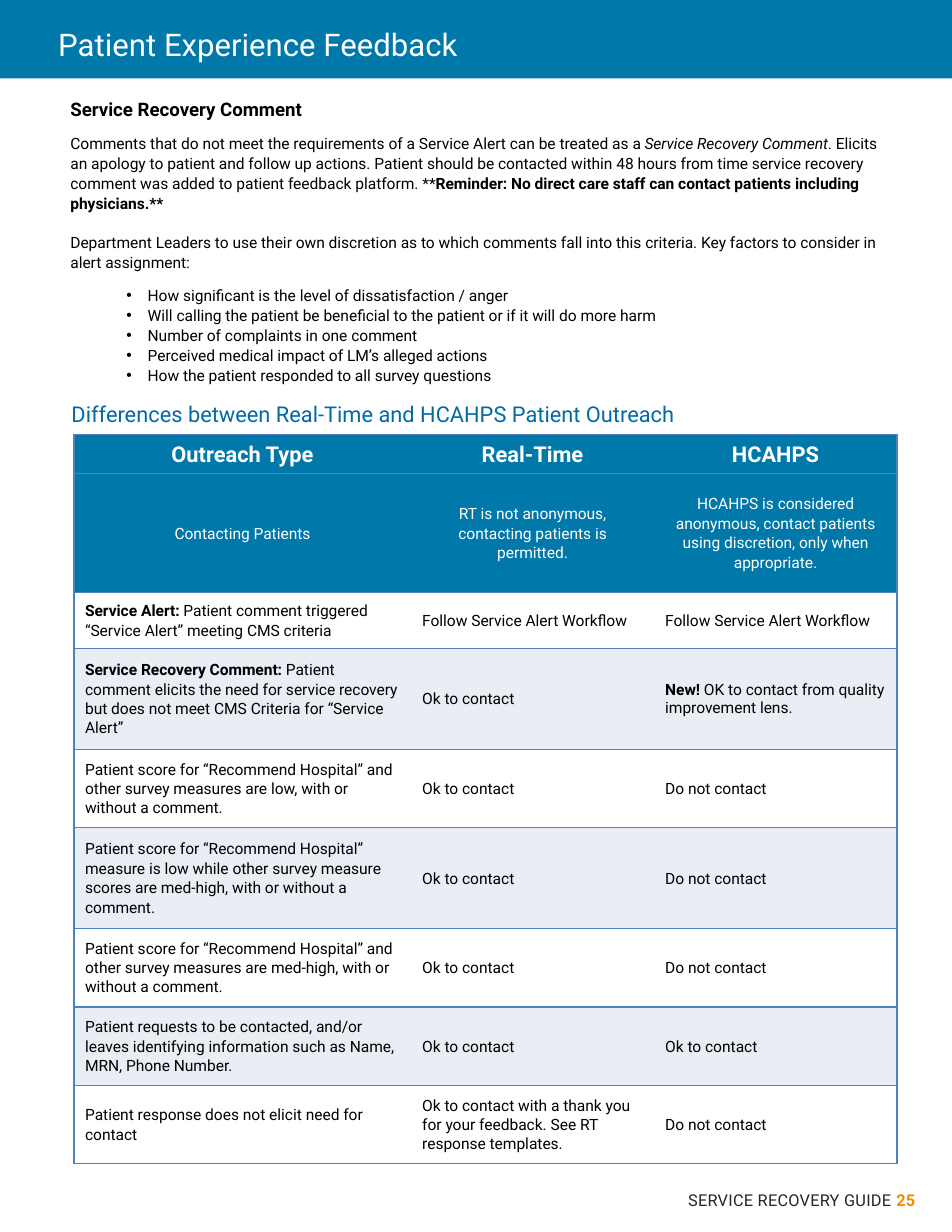
import dataclasses
import typing

import pptx
import pptx.dml.color
import pptx.enum.shapes
import pptx.enum.text
import pptx.oxml.ns
import pptx.oxml.xmlchemy
import pptx.util
from lxml import etree

RGBColor = pptx.dml.color.RGBColor
BLUE = RGBColor(0x00, 0x78, 0xA9)
HEADING_BLUE = RGBColor(0x00, 0x69, 0xA6)
BORDER_BLUE = RGBColor(0x4F, 0x81, 0xBD)
BAND = RGBColor(0xE9, 0xED, 0xF4)
ORANGE = RGBColor(0xF3, 0x8B, 0x00)
CHARCOAL = RGBColor(0x26, 0x26, 0x26)
BLACK = RGBColor(0, 0, 0)
WHITE = RGBColor(0xFF, 0xFF, 0xFF)

FONT = "Roboto"
LOOSE = 1.07
LEFT = pptx.enum.text.PP_ALIGN.LEFT
CENTER = pptx.enum.text.PP_ALIGN.CENTER
RIGHT = pptx.enum.text.PP_ALIGN.RIGHT
TOP = pptx.enum.text.MSO_ANCHOR.TOP
MIDDLE = pptx.enum.text.MSO_ANCHOR.MIDDLE
SLIDE_WIDTH = pptx.util.Inches(8.5)
SLIDE_HEIGHT = pptx.util.Inches(11)
COLUMN = SLIDE_WIDTH // 850
ROW = SLIDE_HEIGHT // 1100
PLAIN_TABLE_STYLE = "{2D5ABB26-0587-4C30-8999-92F81FD0307C}"


class Box(typing.NamedTuple):
    left: int
    top: int
    width: int
    height: int

    def lengths(self) -> tuple[int, int, int, int]:
        return self.left * COLUMN, self.top * ROW, self.width * COLUMN, self.height * ROW


class Run(typing.NamedTuple):
    text: str
    bold: bool = False
    italic: bool = False
    color: RGBColor = BLACK


@dataclasses.dataclass(frozen=True)
class Paragraph:
    runs: tuple[Run, ...]
    size: float = 10
    alignment: typing.Any = LEFT
    line_spacing: float = LOOSE
    space_after: float = 8
    bullet: bool = False
    tracking: int = 0


@dataclasses.dataclass(frozen=True)
class TableRow:
    height: int
    cells: tuple[Paragraph, ...]
    fill: RGBColor
    anchor: typing.Any = MIDDLE


def header(size: float, bold: bool, *texts: str) -> tuple[Paragraph, ...]:
    return tuple(Paragraph((Run(text, bold, color=WHITE),), size, CENTER) for text in texts)


def body(*texts: str) -> tuple[Paragraph, ...]:
    return tuple(Paragraph((Run(text),)) for text in texts)


def labelled(label: str, text: str, line_spacing: float = LOOSE) -> Paragraph:
    return Paragraph((Run(label, bold=True), Run(text)), line_spacing=line_spacing)


FOLLOW = "Follow Service Alert Workflow"
CONTACT = "Ok to contact"
NO_CONTACT = "Do not contact"
SCORE = "Patient score for “Recommend Hospital” "

GUIDANCE = (
    Paragraph((Run("Service Recovery Comment", bold=True),), 12),
    Paragraph((
        Run("Comments that do not meet the requirements of a Service Alert can be treated as a "),
        Run("Service Recovery Comment", italic=True),
        Run(". Elicits an apology to patient and follow up actions. Patient should be contacted within "
            "48 hours from time service recovery comment was added to patient feedback platform. **"),
        Run("Reminder: No direct care staff can contact patients including physicians.**", bold=True),
    ), space_after=12.5),
    Paragraph((Run("Department Leaders to use their own discretion as to which comments fall into this "
                   "criteria. Key factors to consider in alert assignment:"),)),
    *(Paragraph((Run(text),), space_after=0, bullet=True) for text in (
        "How significant is the level of dissatisfaction / anger",
        "Will calling the patient be beneficial to the patient or if it will do more harm",
        "Number of complaints in one comment",
        "Perceived medical impact of LM’s alleged actions",
        "How the patient responded to all survey questions",
    )),
)

TABLE_COLUMNS = (301, 217, 217)
TABLE_ROWS = (
    TableRow(35, header(14, True, "Outreach Type", "Real-Time", "HCAHPS"), BLUE, TOP),
    TableRow(106, header(
        10, False, "Contacting Patients",
        "RT is not anonymous, contacting patients is permitted.",
        "HCAHPS is considered anonymous, contact patients using discretion, only when appropriate."), BLUE),
    TableRow(50, (labelled("Service Alert: ", "Patient comment triggered “Service Alert” meeting CMS criteria"),
                  *body(FOLLOW, FOLLOW)), WHITE),
    TableRow(90, (labelled("Service Recovery Comment: ", "Patient comment elicits the need for service recovery "
                           "but does not meet CMS Criteria for “Service Alert”"),
                  *body(CONTACT),
                  labelled("New! ", "OK to contact from quality improvement lens.", 1)), BAND),
    TableRow(70, body(SCORE + "and other survey measures are low, with or without a comment.",
                      CONTACT, NO_CONTACT), WHITE),
    TableRow(90, body(SCORE + "measure is low while other survey measure scores are med-high, "
                      "with or without a comment.", CONTACT, NO_CONTACT), BAND),
    TableRow(70, body(SCORE + "and other survey measures are med-high, with or without a comment.",
                      CONTACT, NO_CONTACT), WHITE),
    TableRow(70, body("Patient requests to be contacted, and/or leaves identifying information such as "
                      "Name, MRN, Phone Number.", CONTACT, CONTACT), BAND),
    TableRow(70, body("Patient response does not elicit need for contact",
                      "Ok to contact with a thank you for your feedback. See RT response templates.",
                      NO_CONTACT), WHITE),
)


def add_element(parent: typing.Any, tag: str, **attributes: str) -> typing.Any:
    element = etree.SubElement(parent, pptx.oxml.ns.qn(tag))
    for name, value in attributes.items():
        element.set(name, value)
    return element


def write_paragraphs(text_frame: typing.Any, contents: typing.Sequence[Paragraph]) -> None:
    for index, content in enumerate(contents):
        paragraph = text_frame.add_paragraph() if index else text_frame.paragraphs[0]
        paragraph.alignment = content.alignment
        paragraph.line_spacing = content.line_spacing
        paragraph.space_after = pptx.util.Pt(content.space_after)
        if content.bullet:
            paragraph.level = 1
            properties = paragraph._p.get_or_add_pPr()
            properties.set("marL", str(69 * COLUMN))
            properties.set("indent", str(-19 * COLUMN))
            add_element(properties, "a:buFont", typeface="Arial")
            add_element(properties, "a:buChar", char="•")
        paragraph.font.name = FONT
        paragraph.font.size = pptx.util.Pt(content.size)
        for part in content.runs:
            run = paragraph.add_run()
            run.text = part.text
            run.font.bold = part.bold
            run.font.italic = part.italic
            run.font.color.rgb = part.color
            if content.tracking:
                run._r.get_or_add_rPr().set("spc", str(content.tracking))


def add_text(slide: typing.Any, box: Box, *contents: Paragraph) -> typing.Any:
    text_frame = slide.shapes.add_textbox(*box.lengths()).text_frame
    text_frame.word_wrap = True
    write_paragraphs(text_frame, contents)
    return text_frame


def add_banner(slide: typing.Any, box: Box) -> None:
    banner = slide.shapes.add_shape(pptx.enum.shapes.MSO_SHAPE.RECTANGLE, *box.lengths())
    banner.shadow.inherit = False
    banner.fill.solid()
    banner.fill.fore_color.rgb = BLUE
    banner.line.fill.background()


def add_border(cell: typing.Any, side: str) -> None:
    line = add_element(cell._tc.get_or_add_tcPr(), f"a:ln{side}", w=str(pptx.util.Pt(1)))
    add_element(add_element(line, "a:solidFill"), "a:srgbClr", val=str(BORDER_BLUE))


def add_outreach_table(slide: typing.Any, box: Box) -> None:
    frame = slide.shapes.add_table(len(TABLE_ROWS), len(TABLE_COLUMNS), *box.lengths())
    table = frame.table
    table.first_row = table.horz_banding = False
    table._tbl.tblPr.find(pptx.oxml.ns.qn("a:tableStyleId")).text = PLAIN_TABLE_STYLE
    for column, width in zip(table.columns, TABLE_COLUMNS):
        column.width = width * COLUMN
    outer_sides = {0: "LTB", len(TABLE_COLUMNS) - 1: "RTB"}
    for row, content in zip(table.rows, TABLE_ROWS):
        row.height = content.height * ROW
        for index, (cell, paragraph) in enumerate(zip(row.cells, content.cells)):
            for side in outer_sides.get(index, "TB"):
                add_border(cell, side)
            cell.fill.solid()
            cell.fill.fore_color.rgb = content.fill
            cell.vertical_anchor = content.anchor
            write_paragraphs(cell.text_frame, (paragraph,))


def main() -> None:
    presentation = pptx.Presentation()
    presentation.slide_width = SLIDE_WIDTH
    presentation.slide_height = SLIDE_HEIGHT
    slide = presentation.slides.add_slide(presentation.slide_layouts[6])
    add_banner(slide, Box(0, 0, 850, 70))
    add_text(slide, Box(25, 1058, 802, 28), Paragraph(
        (Run("SERVICE RECOVERY GUIDE ", color=CHARCOAL), Run("25", bold=True, color=ORANGE)),
        10.5, RIGHT, 1, 0, tracking=20))
    add_text(slide, Box(53, 81, 748, 269), *GUIDANCE)
    add_text(slide, Box(54, 353, 747, 34), Paragraph(
        (Run("Differences between Real-Time and HCAHPS Patient Outreach", color=HEADING_BLUE),), 14, LEFT, 1, 0))
    add_outreach_table(slide, Box(66, 388, sum(TABLE_COLUMNS), sum(row.height for row in TABLE_ROWS)))
    title = add_text(slide, Box(52, 22, 748, 34), Paragraph(
        (Run("Patient Experience Feedback", color=WHITE),), 20, LEFT, 1, 0))
    title.vertical_anchor = MIDDLE
    title.margin_left = title.margin_right = title.margin_top = title.margin_bottom = 0
    presentation.save("out.pptx")


if __name__ == "__main__":
    main()
